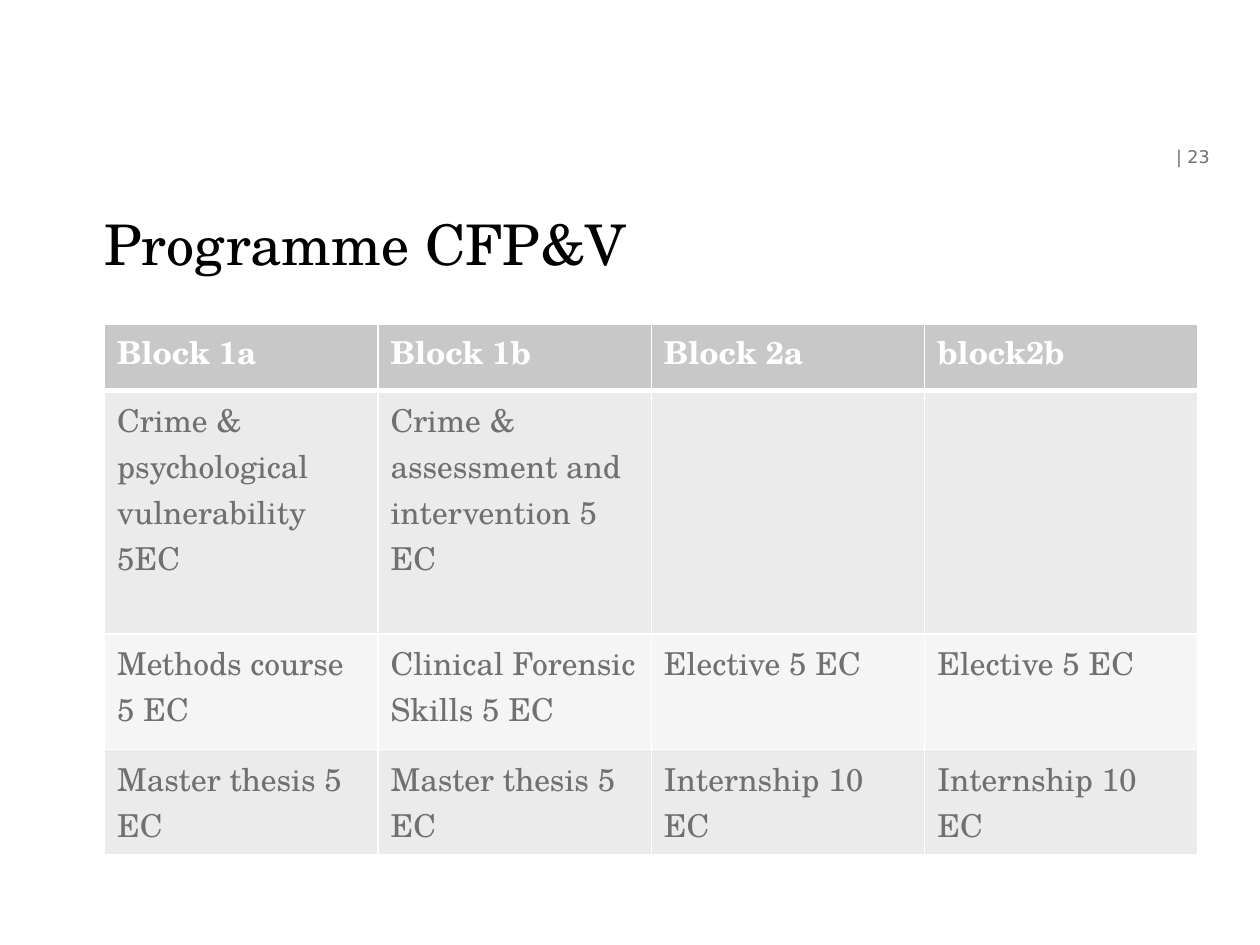
import pptx
import pptx.dml.color
import pptx.enum.text
import pptx.oxml
import pptx.oxml.ns
import pptx.util

SLIDE_WIDTH = pptx.util.Inches(10)
SLIDE_HEIGHT = pptx.util.Inches(7.5)
MARGIN_LEFT = pptx.util.Inches(0.83)
CONTENT_WIDTH = pptx.util.Inches(8.68)

THEME = {
    "title": {"name": "TeX Gyre Schola", "size": 32, "color": "000000", "bold": False, "leading": 42},
    "header": {"name": "TeX Gyre Schola", "size": 18, "color": "FFFFFF", "bold": True, "leading": 26.3},
    "course": {"name": "TeX Gyre Schola", "size": 18, "color": "707070", "bold": False, "leading": 26.3},
    "page": {"name": "DejaVu Sans", "size": 10, "color": "707070", "bold": False, "leading": None},
    "header_fill": "C8C8C8",
    "band_fills": ("F5F5F5", "EBEBEB"),
    "border": "FFFFFF",
}

PROGRAMME = [
    ["Block 1a", "Block 1b", "Block 2a", "block2b"],
    ["Crime & psychological vulnerability 5EC", "Crime & assessment and intervention 5 EC", "", ""],
    ["Methods course 5 EC", "Clinical Forensic Skills 5 EC", "Elective 5 EC", "Elective 5 EC"],
    ["Master thesis 5 EC", "Master thesis 5 EC", "Internship 10 EC", "Internship 10 EC"],
]
ROW_HEIGHTS = (0.53, 1.93, 0.92, 0.83)


def write_text(frame, text, style):
    """Write one paragraph in a named theme style."""
    paragraph = frame.paragraphs[0]
    if style["leading"]:
        paragraph.line_spacing = pptx.util.Pt(style["leading"])
    font_values = {
        "name": style["name"],
        "size": pptx.util.Pt(style["size"]),
        "bold": style["bold"],
    }
    target = paragraph
    if text:
        target = paragraph.add_run()
        target.text = text
    for attribute, value in font_values.items():
        setattr(target.font, attribute, value)
    target.font.color.rgb = pptx.dml.color.RGBColor.from_string(style["color"])


def add_label(slide, box, text, style, anchor):
    """Add a text box without insets."""
    frame = slide.shapes.add_textbox(*box).text_frame
    frame_values = {
        "word_wrap": True,
        "vertical_anchor": anchor,
        "margin_left": 0,
        "margin_top": 0,
        "margin_right": 0,
        "margin_bottom": 0,
    }
    for attribute, value in frame_values.items():
        setattr(frame, attribute, value)
    write_text(frame, text, style)


def add_borders(cell, widths):
    """Draw the cell's sides, with widths in points keyed by side."""
    properties = cell._tc.get_or_add_tcPr()
    for side, width in widths.items():
        properties.append(pptx.oxml.parse_xml(
            f'<a:ln{side} {pptx.oxml.ns.nsdecls("a")} w="{pptx.util.Pt(width)}">'
            f'<a:solidFill><a:srgbClr val="{THEME["border"]}"/></a:solidFill>'
            f'</a:ln{side}>'
        ))


def format_cell(cell, text, row):
    """Fill in one cell according to its row."""
    is_header = row == 0
    add_borders(cell, {"L": 1, "R": 1, "T": 3 if row == 1 else 1, "B": 3 if is_header else 1})
    fill = THEME["header_fill"] if is_header else THEME["band_fills"][row % 2]
    cell.fill.solid()
    cell.fill.fore_color.rgb = pptx.dml.color.RGBColor.from_string(fill)
    write_text(cell.text_frame, text, THEME["header" if is_header else "course"])


def add_programme(slide):
    """Add the table of courses by block."""
    columns = len(PROGRAMME[0])
    programme = slide.shapes.add_table(
        len(PROGRAMME), columns, MARGIN_LEFT, pptx.util.Inches(2.57),
        CONTENT_WIDTH, pptx.util.Inches(sum(ROW_HEIGHTS)),
    ).table
    programme.horz_banding = False
    for column in programme.columns:
        column.width = CONTENT_WIDTH // columns
    for row, (height, courses) in enumerate(zip(ROW_HEIGHTS, PROGRAMME)):
        programme.rows[row].height = pptx.util.Inches(height)
        for column, course in enumerate(courses):
            format_cell(programme.cell(row, column), course, row)


def main():
    """Build the programme slide."""
    presentation = pptx.Presentation()
    presentation.slide_width = SLIDE_WIDTH
    presentation.slide_height = SLIDE_HEIGHT
    slide = presentation.slides.add_slide(presentation.slide_layouts[6])
    anchors = pptx.enum.text.MSO_ANCHOR
    title_box = (MARGIN_LEFT, pptx.util.Inches(1.61), CONTENT_WIDTH, pptx.util.Inches(0.72))
    page_box = [pptx.util.Inches(length) for length in (9.29, 1.1, 0.71, 0.29)]
    add_label(slide, title_box, "Programme CFP&V", THEME["title"], anchors.TOP)
    add_programme(slide)
    add_label(slide, page_box, " | 23", THEME["page"], anchors.MIDDLE)
    presentation.save("out.pptx")


if __name__ == "__main__":
    main()
